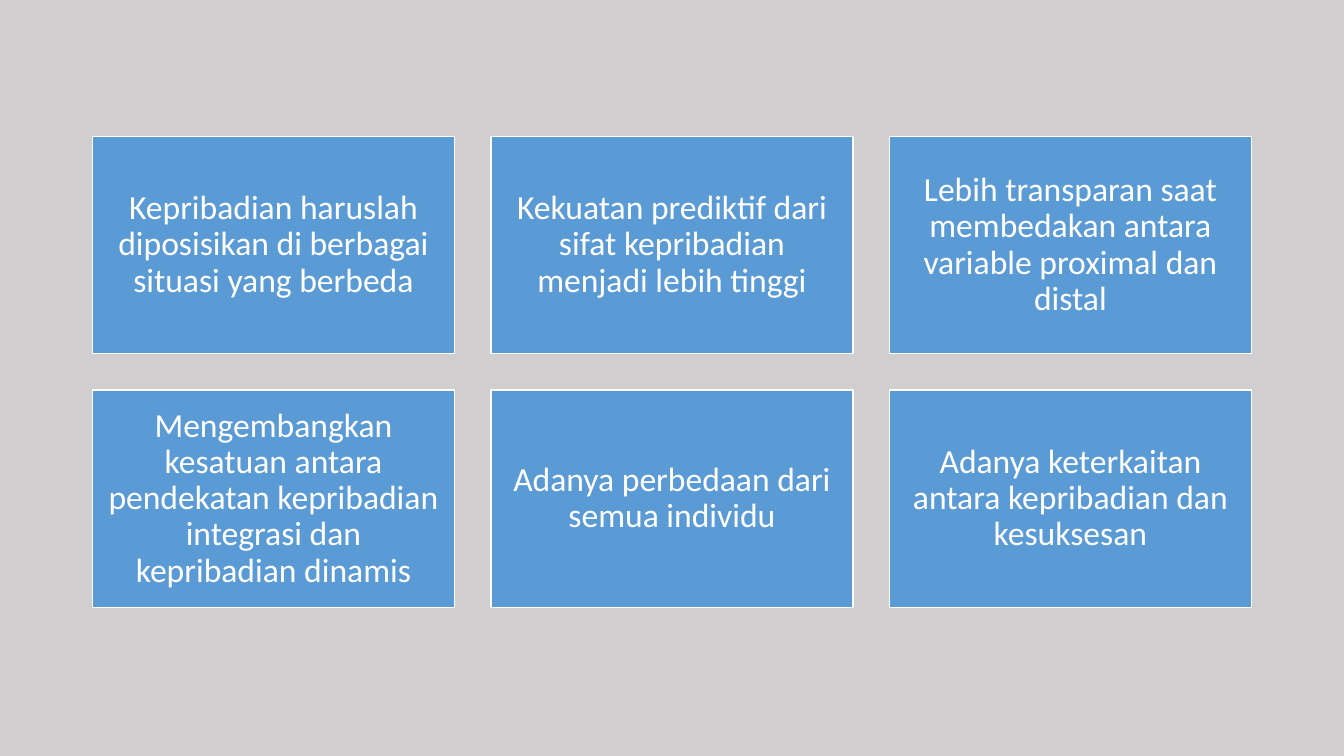
from dataclasses import dataclass

from pptx import Presentation
from pptx.dml.color import RGBColor
from pptx.enum.shapes import MSO_SHAPE
from pptx.enum.text import MSO_ANCHOR, PP_ALIGN
from pptx.util import Pt

RECTANGLE = MSO_SHAPE.RECTANGLE
MIDDLE = MSO_ANCHOR.MIDDLE
CENTER = PP_ALIGN.CENTER
BLANK_LAYOUT = 6


@dataclass(frozen=True)
class Theme:
    background: RGBColor = RGBColor(0xD0, 0xCE, 0xCE)
    card: RGBColor = RGBColor(0x5B, 0x9B, 0xD5)
    light: RGBColor = RGBColor(0xFF, 0xFF, 0xFF)
    font: str = "Calibri"
    body_size: float = 24
    border: float = 1
    inset: float = 7.2


def apply_format(target, values):
    for attribute, value in values.items():
        setattr(target, attribute, value)


class SlideBuilder:
    def __init__(self, slide, theme):
        self.slide = slide
        self.theme = theme

    def background(self):
        fill = self.slide.background.fill
        fill.solid()
        fill.fore_color.rgb = self.theme.background

    def card(self, statement, left, top, width, height):
        theme = self.theme
        card = self.slide.shapes.add_shape(
            RECTANGLE, Pt(left), Pt(top), Pt(width), Pt(height))
        card.shadow.inherit = False
        card.fill.solid()
        card.fill.fore_color.rgb = theme.card
        card.line.color.rgb = theme.light
        card.line.width = Pt(theme.border)

        frame = card.text_frame
        inset = Pt(theme.inset)
        apply_format(frame, {
            "word_wrap": True, "vertical_anchor": MIDDLE,
            "margin_left": inset, "margin_right": inset,
            "margin_top": inset, "margin_bottom": inset,
        })
        paragraph = frame.paragraphs[0]
        apply_format(paragraph, {
            "alignment": CENTER, "line_spacing": 0.9,
            "space_after": Pt(0.35 * theme.body_size),
        })
        run = paragraph.add_run()
        run.text = statement
        apply_format(run.font, {"name": theme.font, "size": Pt(theme.body_size)})
        run.font.color.rgb = theme.light


STATEMENTS = [
    "Kepribadian haruslah diposisikan di berbagai situasi yang berbeda",
    "Kekuatan prediktif dari sifat kepribadian menjadi lebih tinggi",
    "Lebih transparan saat membedakan antara variable proximal dan distal",
    "Mengembangkan kesatuan antara pendekatan kepribadian integrasi dan kepribadian dinamis",
    "Adanya perbedaan dari semua individu",
    "Adanya keterkaitan antara kepribadian dan kesuksesan",
]
COLUMNS = 3
GRID_LEFT, GRID_TOP = 66, 97.4
CARD_WIDTH, CARD_HEIGHT = 258.75, 155.25
GAP = 25.87


def main():
    presentation = Presentation()
    presentation.slide_width = Pt(960)
    presentation.slide_height = Pt(540)
    slide = presentation.slides.add_slide(presentation.slide_layouts[BLANK_LAYOUT])
    builder = SlideBuilder(slide, Theme())
    builder.background()
    for index, statement in enumerate(STATEMENTS):
        row, column = divmod(index, COLUMNS)
        builder.card(
            statement,
            GRID_LEFT + column * (CARD_WIDTH + GAP),
            GRID_TOP + row * (CARD_HEIGHT + GAP),
            CARD_WIDTH, CARD_HEIGHT)
    presentation.save("out.pptx")


if __name__ == "__main__":
    main()
